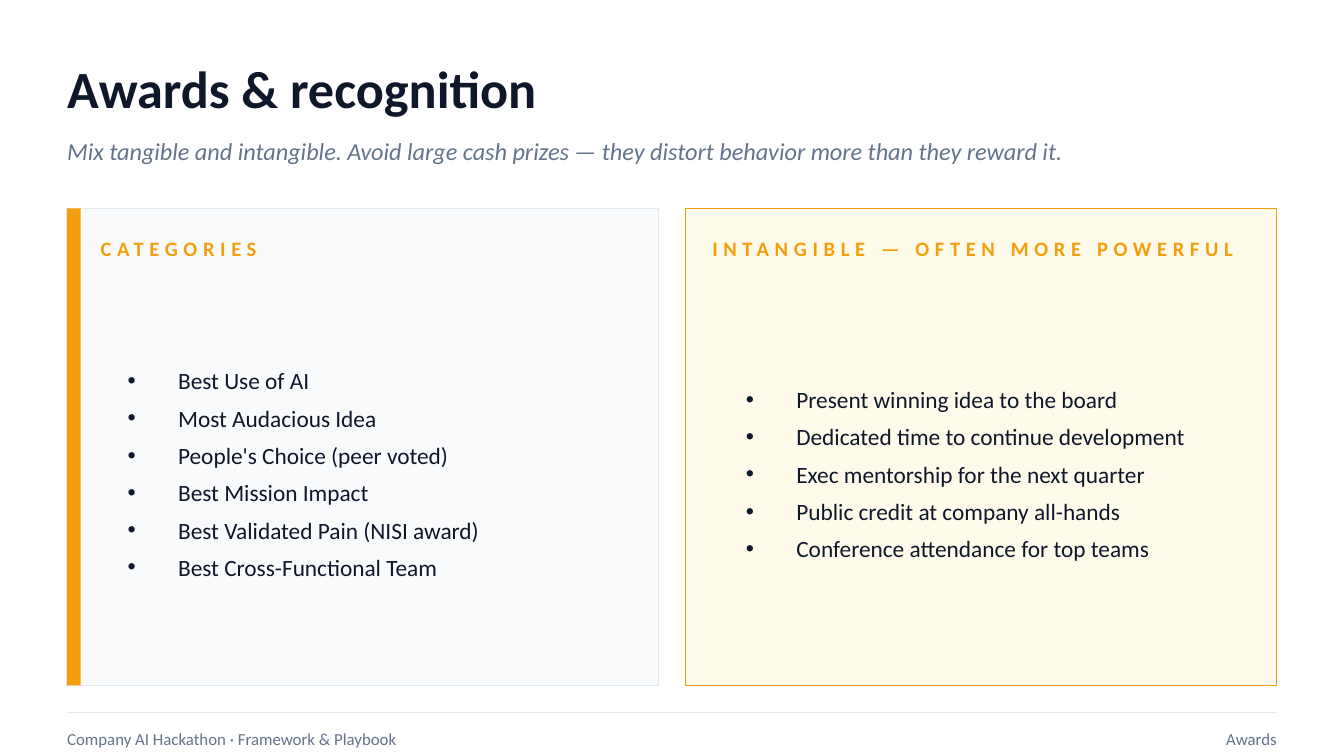
"""Build the awards and recognition slide of the hackathon playbook."""

from dataclasses import dataclass
from typing import Optional

from lxml.etree import SubElement
from pptx import Presentation
from pptx.dml.color import RGBColor
from pptx.enum.shapes import MSO_CONNECTOR, MSO_SHAPE
from pptx.enum.text import MSO_ANCHOR, MSO_AUTO_SIZE, PP_ALIGN
from pptx.oxml.ns import qn
from pptx.util import Inches, Pt


@dataclass(frozen=True)
class Theme:
    font: str = "Calibri"
    ink: str = "0F172A"
    muted: str = "64748B"
    accent: str = "F59E0B"
    border: str = "E2E8F0"
    pale: str = "F8FAFC"
    cream: str = "FFFBEB"
    title_size: float = 28
    subtitle_size: float = 13
    label_size: float = 11
    item_size: float = 12.5
    footer_size: float = 9
    line_width: float = 0.75


@dataclass(frozen=True)
class Box:
    left: float
    top: float
    width: float
    height: float


@dataclass(frozen=True)
class Card:
    heading: str
    items: tuple[str, ...]
    left: float
    fill: str
    border: str
    heading_inset: float
    heading_width: float
    bar: bool = False


THEME = Theme()
PAGE_WIDTH = 10
PAGE_HEIGHT = PAGE_WIDTH * 9 / 16
CARD_TOP, CARD_WIDTH, CARD_HEIGHT = 1.55, 4.4, 3.55
LIST_INDENT = 3 / 8
CARDS = (
    Card(
        "CATEGORIES",
        (
            "Best Use of AI",
            "Most Audacious Idea",
            "People's Choice (peer voted)",
            "Best Mission Impact",
            "Best Validated Pain (NISI award)",
            "Best Cross-Functional Team",
        ),
        left=0.5, fill=THEME.pale, border=THEME.border,
        heading_inset=0.25, heading_width=4, bar=True,
    ),
    Card(
        "INTANGIBLE — OFTEN MORE POWERFUL",
        (
            "Present winning idea to the board",
            "Dedicated time to continue development",
            "Exec mentorship for the next quarter",
            "Public credit at company all-hands",
            "Conference attendance for top teams",
        ),
        left=5.1, fill=THEME.cream, border=THEME.accent,
        heading_inset=0.2, heading_width=4.1,
    ),
)


def place(shape, box: Box) -> None:
    """Move and size a shape."""
    shape.left, shape.top = Inches(box.left), Inches(box.top)
    shape.width, shape.height = Inches(box.width), Inches(box.height)


def write(para, text: str, *, size: float, color: str, bold: bool = False,
          italic: bool = False, spacing: float = 0, align=PP_ALIGN.LEFT) -> None:
    """Add one formatted span to a paragraph."""
    para.alignment = align
    span = para.add_run()
    span.text = text
    font = span.font
    font.name, font.size = THEME.font, Pt(size)
    font.bold, font.italic = bold, italic
    font.color.rgb = RGBColor.from_string(color)
    if spacing:
        font._element.set("spc", str(round(spacing * 100)))


def prepare_frame(shape, inset: Optional[float] = None):
    """Set wrapping, middle anchoring and margins of a text frame."""
    frame = shape.text_frame
    frame.word_wrap = True
    frame.auto_size = MSO_AUTO_SIZE.NONE
    frame.vertical_anchor = MSO_ANCHOR.MIDDLE
    if inset is not None:
        frame.margin_left = frame.margin_right = Inches(inset)
        frame.margin_top = frame.margin_bottom = Inches(inset)
    return frame


def add_label(page, text: str, box: Box, **style) -> None:
    """Add a text box without margins."""
    shape = page.shapes.add_textbox(0, 0, 0, 0)
    place(shape, box)
    write(prepare_frame(shape, 0).paragraphs[0], text, **style)


def add_panel(page, box: Box, fill: str, border: Optional[str] = None) -> None:
    """Add a filled rectangle with an optional border."""
    panel = page.shapes.add_shape(MSO_SHAPE.RECTANGLE, 0, 0, 0, 0)
    place(panel, box)
    panel.shadow.inherit = False
    panel.fill.solid()
    panel.fill.fore_color.rgb = RGBColor.from_string(fill)
    if border:
        panel.line.color.rgb = RGBColor.from_string(border)
        panel.line.width = Pt(THEME.line_width)
    else:
        panel.line.fill.background()


def fill_list(body, items: tuple[str, ...], box: Box) -> None:
    """Fill a body placeholder with bullets and bring it to the front."""
    place(body, box)
    body.element.getparent().append(body.element)
    frame = prepare_frame(body)
    for index, item in enumerate(items):
        para = frame.add_paragraph() if index else frame.paragraphs[0]
        para.space_before, para.space_after = Pt(0), Pt(5)
        properties = para._p.get_or_add_pPr()
        properties.set("marL", str(Inches(LIST_INDENT)))
        properties.set("indent", str(-Inches(LIST_INDENT)))
        SubElement(properties, qn("a:buChar"), char="•")
        write(para, item, size=THEME.item_size, color=THEME.ink)


def draw_card(page, card: Card, body) -> None:
    """Draw a card with its heading and list."""
    add_panel(page, Box(card.left, CARD_TOP, CARD_WIDTH, CARD_HEIGHT),
              card.fill, card.border)
    if card.bar:
        add_panel(page, Box(card.left, CARD_TOP, 0.1, CARD_HEIGHT), THEME.accent)
    add_label(page, card.heading,
              Box(card.left + card.heading_inset, CARD_TOP + 0.15, card.heading_width, 0.3),
              size=THEME.label_size, color=THEME.accent, bold=True, spacing=3)
    fill_list(body, card.items, Box(card.left + 0.35, CARD_TOP + 0.5, 3.95, 2.95))


def draw_footer(page) -> None:
    """Draw the footer rule and its two labels."""
    rule = page.shapes.add_connector(
        MSO_CONNECTOR.STRAIGHT, Inches(0.5), Inches(5.3), Inches(9.5), Inches(5.3))
    rule.line.color.rgb = RGBColor.from_string(THEME.border)
    rule.line.width = Pt(THEME.line_width)
    SubElement(rule.element.spPr, qn("a:effectLst"))
    style = {"size": THEME.footer_size, "color": THEME.muted}
    add_label(page, "Company AI Hackathon · Framework & Playbook",
              Box(0.5, 5.35, 5.5, 0.3), **style)
    add_label(page, "Awards", Box(6, 5.35, 3.5, 0.3), align=PP_ALIGN.RIGHT, **style)


def main() -> None:
    """Build and save the deck."""
    deck = Presentation()
    deck.slide_width, deck.slide_height = Inches(PAGE_WIDTH), Inches(PAGE_HEIGHT)
    page = deck.slides.add_slide(deck.slide_layouts.get_by_name("Two Content"))
    title, *bodies = page.placeholders
    place(title, Box(0.5, 0.35, 9, 0.6))
    write(prepare_frame(title, 0).paragraphs[0], "Awards & recognition",
          size=THEME.title_size, color=THEME.ink, bold=True)
    add_label(page, "Mix tangible and intangible. Avoid large cash prizes — "
              "they distort behavior more than they reward it.",
              Box(0.5, 0.95, 9, 0.35),
              size=THEME.subtitle_size, color=THEME.muted, italic=True)
    for card, body in zip(CARDS, bodies):
        draw_card(page, card, body)
    draw_footer(page)
    deck.save("out.pptx")


if __name__ == "__main__":
    main()
